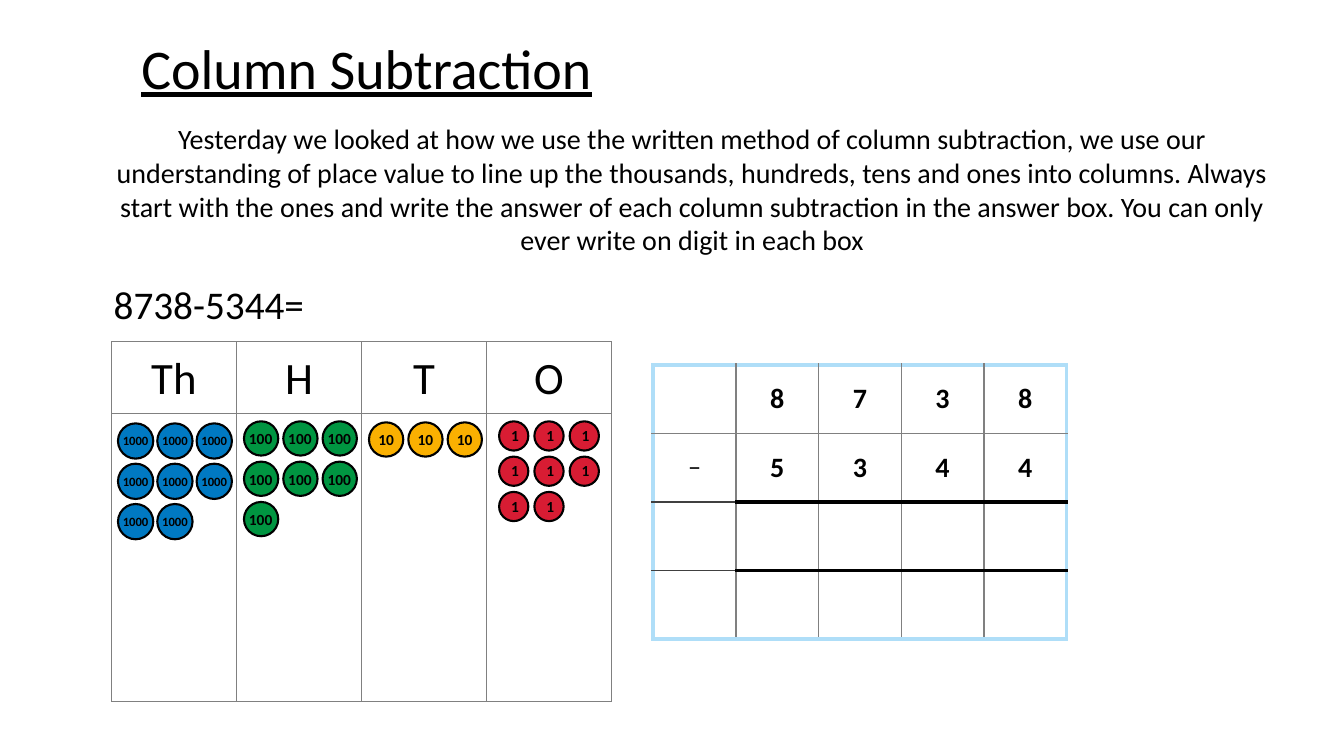
"""Build the column subtraction slide with place value counters."""
from dataclasses import dataclass

from lxml import etree
from pptx import Presentation
from pptx import util as u
from pptx.dml.color import RGBColor
from pptx.enum import shapes, text
from pptx.oxml import ns

TITLE = "Column Subtraction"
INTRO = (
    "Yesterday we looked at how we use the written method of column subtraction, "
    "we use our understanding of place value to line up the thousands, hundreds, "
    "tens and ones into columns. Always start with the ones and write the answer "
    "of each column subtraction in the answer box. You can only ever write on "
    "digit in each box"
)
SUM = "8738-5344="
HEADS = ["Th", "H", "T", "O"]
DIGITS = [["", "8", "7", "3", "8"], ["−", "5", "3", "4", "4"], [""] * 5, [""] * 5]
PLACES = [[""] * 4, [""] * 4]
COUNTERS = [
    dict(label="1000", count=8, at=(117, 420), size=35, step=(39, 40), box=(51, 25), fill="0079C2", pt=9),
    dict(label="100", count=7, at=(242, 418), size=34, step=(39, 40), box=(49, 29), fill="009541", pt=11),
    dict(label="10", count=3, at=(366, 419), size=34, step=(39, 40), box=(40, 29), fill="FAB001", pt=11),
    dict(label="1", count=8, at=(495, 418), size=29, step=(35, 35), box=(25, 29), fill="D81C33", pt=11),
]


@dataclass(frozen=True)
class Theme:
    font: str = "Calibri"
    ink: str = "000000"
    paper: str = "FFFFFF"
    grey: str = "808080"
    dark: str = "404040"
    sky: str = "AFDEF8"
    title: int = 40
    head: int = 32
    sum: int = 28
    body: int = 20
    sign: int = 18


LOOK = Theme()
PX = 9144
WIDE, HIGH = 1333, 750
PER_ROW = 3


def px(*vals):
    return [u.Emu(v * PX) for v in vals]


def write(frame, words, size=LOOK.body, bold=False, line=False, align="CENTER"):
    para = frame.paragraphs[0]
    para.alignment = getattr(text.PP_ALIGN, align)
    run = para.add_run()
    run.text = words
    font = run.font
    font.name, font.size = LOOK.font, u.Pt(size)
    font.bold, font.underline = bold, line
    font.color.rgb = RGBColor.from_string(LOOK.ink)


def clear_insets(box):
    box.margin_left = box.margin_right = box.margin_top = box.margin_bottom = 0


def add_text(tree, at, words, inset=True, **form):
    frame = tree.add_textbox(*px(*at)).text_frame
    frame.word_wrap = True
    frame.auto_size = text.MSO_AUTO_SIZE.SHAPE_TO_FIT_TEXT
    if not inset:
        clear_insets(frame)
    write(frame, words, **form)


def set_edges(cell, edges):
    props = cell._tc.get_or_add_tcPr()
    for i, (side, (color, width)) in enumerate(zip("LRTB", edges)):
        line = etree.Element(ns.qn("a:ln" + side), w=str(u.Pt(width)))
        fill = etree.SubElement(line, ns.qn("a:solidFill"))
        etree.SubElement(fill, ns.qn("a:srgbClr"), val=color)
        props.insert(i, line)


def add_grid(tree, at, cols, rows, data, across, down):
    frame = tree.add_table(len(rows), len(cols), *px(*at, sum(cols), sum(rows)))
    table = frame.table
    table.first_row = table.horz_banding = False
    for col, wide in zip(table.columns, px(*cols)):
        col.width = wide
    for row, high in zip(table.rows, px(*rows)):
        row.height = high
    for r, line in enumerate(data):
        for c, words in enumerate(line):
            cell = table.cell(r, c)
            cell.fill.solid()
            cell.fill.fore_color.rgb = RGBColor.from_string(LOOK.paper)
            set_edges(cell, [down(c), down(c + 1), across(r, c), across(r + 1, c)])
            if words:
                cell.vertical_anchor = text.MSO_ANCHOR.MIDDLE
                digit = words.isdigit()
                if digit:
                    clear_insets(cell)
                write(cell.text_frame, words, size=LOOK.body if digit else LOOK.sign, bold=digit)


def sum_across(r, c):
    if r in (0, 4):
        return LOOK.sky, 3
    if r == 1:
        return LOOK.grey, 1
    return (LOOK.ink, 3) if c else (LOOK.dark, 1)


def sum_down(c):
    return (LOOK.sky, 3) if c in (0, 5) else (LOOK.grey, 1)


def thin(*spot):
    return LOOK.grey, 1


def add_disc(tree, x, y, kind):
    group = tree.add_group_shape().shapes
    size, (wide, high) = kind["size"], kind["box"]
    disc = group.add_shape(shapes.MSO_SHAPE.OVAL, *px(x, y, size, size))
    disc.shadow.inherit = False
    disc.fill.solid()
    disc.fill.fore_color.rgb = RGBColor.from_string(kind["fill"])
    disc.line.color.rgb = RGBColor.from_string(LOOK.ink)
    disc.line.width = u.Pt(1.5)
    at = x + (size - wide) // 2, y + (size - high + 1) // 2, wide, high
    add_text(group, at, kind["label"], size=kind["pt"], bold=True)


def main():
    deck = Presentation()
    deck.slide_width, deck.slide_height = px(WIDE, HIGH)
    tree = deck.slides.add_slide(deck.slide_layouts[6]).shapes
    add_text(tree, (88, 33, 551, 67), TITLE, inset=False, size=LOOK.title, line=True)
    add_grid(tree, (111, 339), [124] * 4, [71, 286], PLACES, thin, thin)
    for i, head in enumerate(HEADS):
        add_text(tree, (113 + 124 * i, 342, 119, 64), head, size=LOOK.head)
    add_grid(tree, (648, 362), [82] * 5, [68] * 4, DIGITS, sum_across, sum_down)
    for kind in COUNTERS:
        (left, top), (dx, dy) = kind["at"], kind["step"]
        for i in range(kind["count"]):
            row, col = divmod(i, PER_ROW)
            add_disc(tree, left + col * dx, top + row * dy, kind)
    add_text(tree, (95, 116, 1183, 145), INTRO)
    add_text(tree, (103, 273, 477, 57), SUM, size=LOOK.sum, align="LEFT")
    deck.save("out.pptx")


if __name__ == "__main__":
    main()
